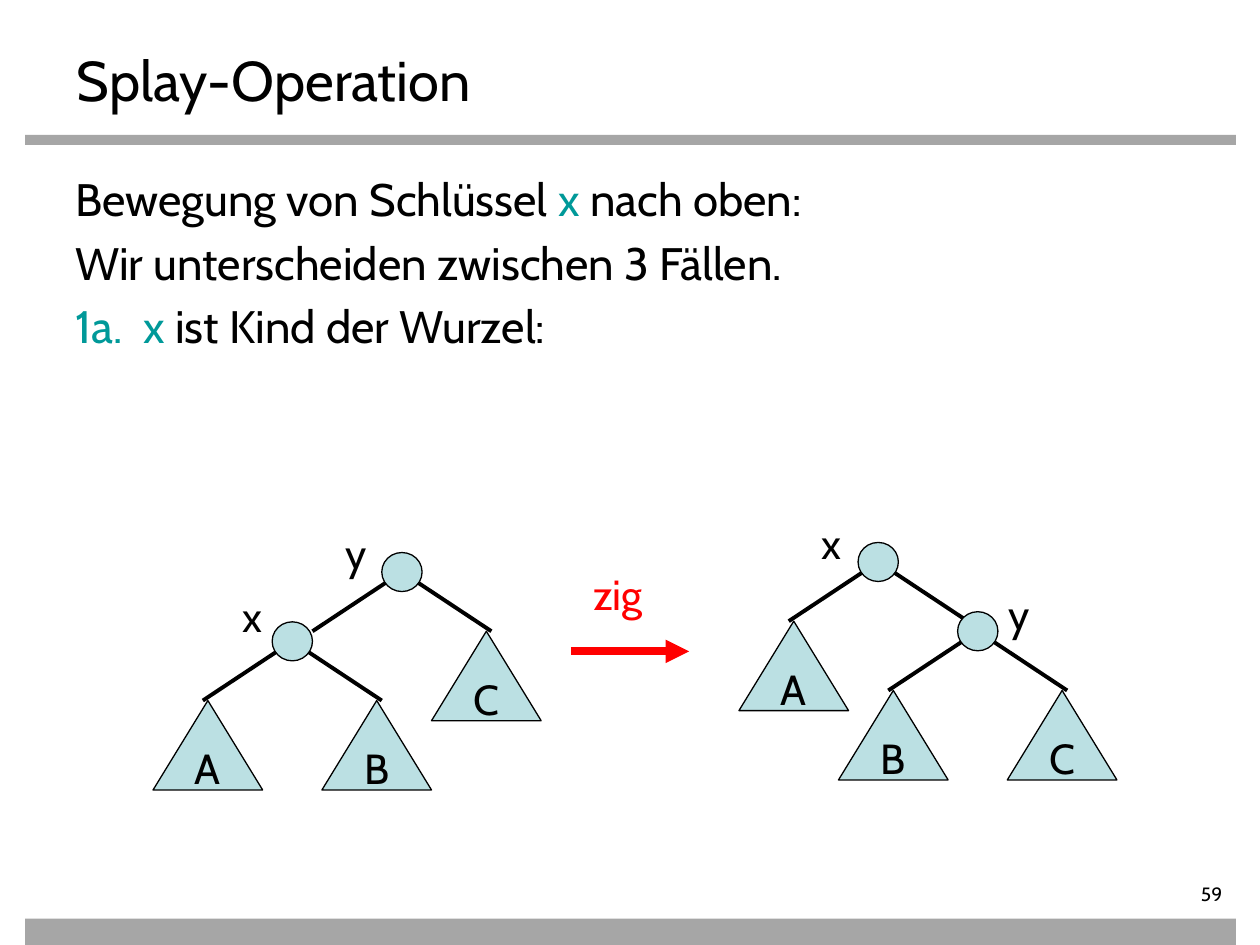
from dataclasses import dataclass
from typing import Optional

import pptx
import pptx.dml.color
import pptx.enum.shapes
import pptx.enum.text
import pptx.oxml
import pptx.oxml.ns
import pptx.util

Inches = pptx.util.Inches
Pt = pptx.util.Pt
SHAPE = pptx.enum.shapes.MSO_SHAPE
ALIGN = pptx.enum.text.PP_ALIGN
ANCHOR = pptx.enum.text.MSO_ANCHOR


def rgb(value):
    return pptx.dml.color.RGBColor.from_string(value)


@dataclass(frozen=True)
class Theme:
    font: str = "Cabin"
    ink: str = "000000"
    key: str = "009999"
    accent: str = "FF0000"
    node: str = "BBE0E3"
    bar: str = "A6A6A6"
    title_size: int = 32
    body_size: int = 26
    label_size: int = 24
    number_size: int = 11
    outline: float = 0.75
    edge: float = 2.25
    arrow: float = 4.5


@dataclass(frozen=True)
class Box:
    left: float
    top: float
    width: float
    height: float

    def lengths(self):
        return [Inches(v) for v in (self.left, self.top, self.width, self.height)]


@dataclass(frozen=True)
class Node:
    label: str
    label_shift: tuple  # from node centre to label corner
    left: object        # a Node, or the letter of a subtree
    right: object
    shift: tuple = (0, 0)  # from parent centre to node centre


THEME = Theme()
EDGE_X, EDGE_Y = 0.71, 0.47
APEX_X = 0.67
NODE_W, NODE_H = 0.32, 0.31
SUBTREE_W, SUBTREE_H = 0.87, 0.71
LABEL_W, LABEL_H = 0.37, 0.5


def style_para(para, size, color=THEME.ink, align: Optional[ALIGN] = None):
    para.font.name = THEME.font
    para.font.size = Pt(size)
    para.font.color.rgb = rgb(color)
    para.alignment = align


def add_filled(page, kind, box, fill, outlined=True):
    shape = page.shapes.add_shape(kind, *box.lengths())
    shape.shadow.inherit = False
    shape.fill.solid()
    shape.fill.fore_color.rgb = rgb(fill)
    if outlined:
        shape.line.color.rgb = rgb(THEME.ink)
        shape.line.width = Pt(THEME.outline)
    else:
        shape.line.fill.background()
    return shape


def add_line(page, start, end, width, color=THEME.ink, arrowhead=False):
    line = page.shapes.add_connector(
        pptx.enum.shapes.MSO_CONNECTOR.STRAIGHT,
        *[Inches(v) for v in (*start, *end)])
    line.line.color.rgb = rgb(color)
    line.line.width = Pt(width)
    properties = line._element.spPr
    if arrowhead:
        head = pptx.oxml.parse_xml(
            f'<a:tailEnd {pptx.oxml.ns.nsdecls("a")} type="triangle"/>')
        properties.find(pptx.oxml.ns.qn("a:ln")).append(head)
    properties.append(pptx.oxml.parse_xml(
        f'<a:effectLst {pptx.oxml.ns.nsdecls("a")}/>'))


def add_label(page, box, text, color=THEME.ink):
    frame = page.shapes.add_textbox(*box.lengths()).text_frame
    frame.word_wrap = False
    frame.auto_size = pptx.enum.text.MSO_AUTO_SIZE.SHAPE_TO_FIT_TEXT
    frame.text = text
    style_para(frame.paragraphs[0], THEME.label_size, color)


def add_subtree(page, apex_x, apex_y, letter):
    box = Box(apex_x - SUBTREE_W / 2, apex_y, SUBTREE_W, SUBTREE_H)
    frame = add_filled(page, SHAPE.ISOSCELES_TRIANGLE, box, THEME.node).text_frame
    frame.word_wrap = False
    frame.vertical_anchor = ANCHOR.MIDDLE
    frame.text = letter
    style_para(frame.paragraphs[0], THEME.label_size, align=ALIGN.CENTER)


def add_node(page, x, y, node):
    """Draw a node at its centre, with its edges, children and label."""
    for side, child in ((-1, node.left), (1, node.right)):
        add_line(page, (x + side * EDGE_X, y + EDGE_Y), (x, y), THEME.edge)
        if isinstance(child, Node):
            add_node(page, x + child.shift[0], y + child.shift[1], child)
        else:
            add_subtree(page, x + side * APEX_X, y + EDGE_Y, child)
    add_filled(page, SHAPE.OVAL,
               Box(x - NODE_W / 2, y - NODE_H / 2, NODE_W, NODE_H), THEME.node)
    add_label(page, Box(x + node.label_shift[0], y + node.label_shift[1],
                        LABEL_W, LABEL_H), node.label)


def add_tree(page, box, root, root_x):
    add_node(page, box.left + root_x, box.top + 0.4, root)


def add_frame(page, box, number):
    """Grey bars and page number."""
    for top, height in ((1.07, 0.08), (7.29, 0.21)):
        add_filled(page, SHAPE.RECTANGLE,
                   Box(box.left + 0.2, box.top + top, 9.61, height),
                   THEME.bar, outlined=False)
    number_box = Box(box.left + 8.7, box.top + 7, 1.1, 0.22)
    frame = page.shapes.add_textbox(*number_box.lengths()).text_frame
    frame.margin_left = frame.margin_top = frame.margin_bottom = 0
    frame.word_wrap = True
    frame.text = number
    style_para(frame.paragraphs[0], THEME.number_size, align=ALIGN.RIGHT)


def add_title(page, box, text):
    title = page.shapes.title
    title.left, title.top, title.width, title.height = box.lengths()
    frame = title.text_frame
    frame.auto_size = pptx.enum.text.MSO_AUTO_SIZE.NONE
    frame.vertical_anchor = ANCHOR.TOP
    frame.margin_top = Inches(0.08)
    frame.text = text
    style_para(frame.paragraphs[0], THEME.title_size, align=ALIGN.LEFT)


def add_body(page, box, lines):
    """Each line is a list of (text, color) spans."""
    frame = page.shapes.add_textbox(*box.lengths()).text_frame
    frame.word_wrap = True
    for index, spans in enumerate(lines):
        para = frame.add_paragraph() if index else frame.paragraphs[0]
        properties = para._p.get_or_add_pPr()
        properties.set("marL", str(Inches(0.54)))
        properties.set("indent", str(-Inches(0.54)))
        if index:
            para.space_before = Pt(0.2 * THEME.body_size)
        style_para(para, THEME.body_size)
        for text, color in spans:
            span = para.add_run()
            span.text = text
            span.font.color.rgb = rgb(color)


def add_step(page, box, name):
    """Rotation name above its arrow."""
    add_label(page, Box(box.left + 0.08, box.top, 0.63, LABEL_H), name, THEME.accent)
    y = box.top + box.height
    add_line(page, (box.left, y), (box.left + box.width, y),
             THEME.arrow, THEME.accent, arrowhead=True)


def main():
    deck = pptx.Presentation()
    deck.slide_width, deck.slide_height = Inches(10), Inches(7.5)
    page = deck.slides.add_slide(deck.slide_layouts[5])

    add_frame(page, Box(0, 0, 10, 7.5), "59")
    add_title(page, Box(0.51, 0.28, 9, 0.55), "Splay-Operation")
    add_body(page, Box(0.5, 1.31, 9, 5.43), [
        [("Bewegung von Schlüssel ", THEME.ink), ("x", THEME.key),
         (" nach oben:", THEME.ink)],
        [("Wir unterscheiden zwischen 3 Fällen.", THEME.ink)],
        [("1a.\tx", THEME.key), (" ist Kind der Wurzel:", THEME.ink)],
    ])

    # Trees before and after the rotation
    lower_x = Node("x", (-0.49, -0.45), "A", "B", shift=(-0.87, 0.55))
    lower_y = Node("y", (0.15, -0.39), "B", "C", shift=(0.79, 0.55))
    root_label = (-0.55, -0.4)
    add_tree(page, Box(1.22, 4.14, 3.08, 2.13),
             Node("y", root_label, lower_x, "C"), root_x=1.97)
    add_step(page, Box(4.53, 4.46, 0.94, 0.71), "zig")
    add_tree(page, Box(5.87, 4.06, 2.99, 2.13),
             Node("x", root_label, "A", lower_y), root_x=1.1)

    deck.save("out.pptx")


if __name__ == "__main__":
    main()
